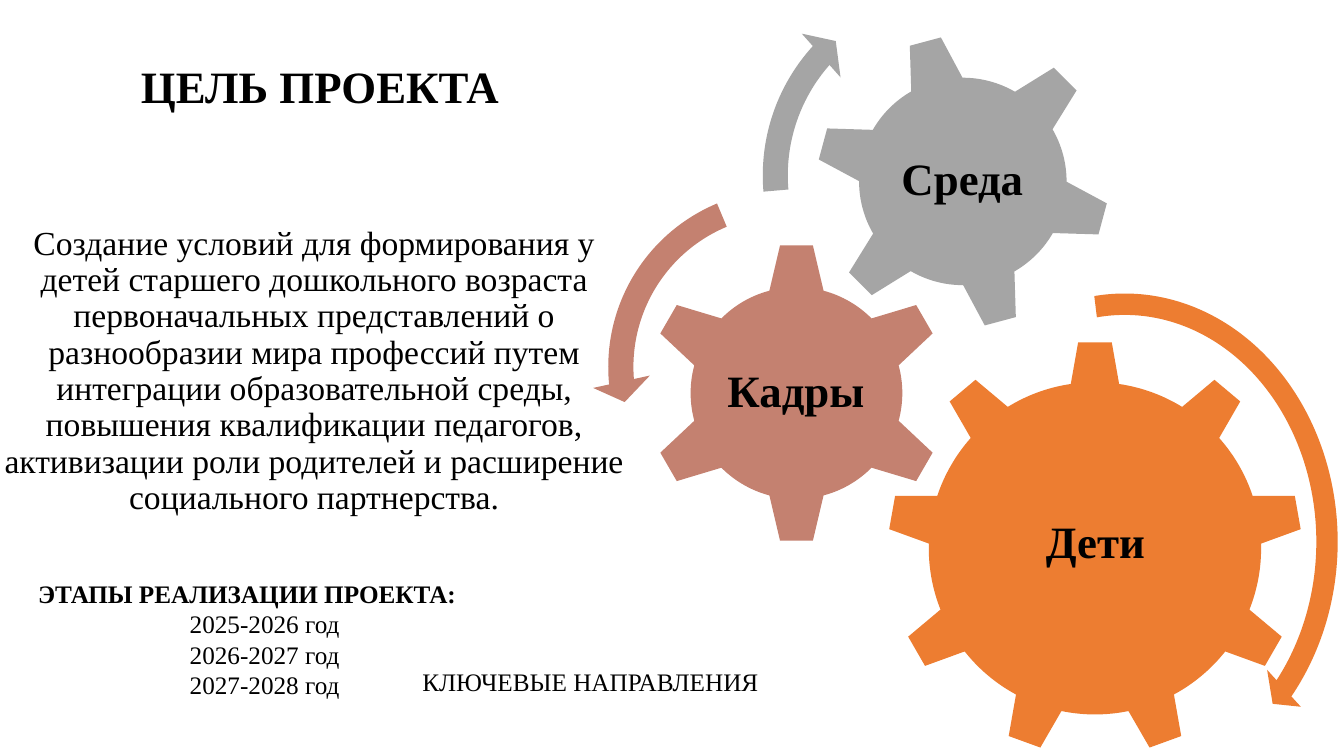
"""Build the project goal slide with three interlocking gears."""
from dataclasses import dataclass

from pptx import Presentation
from pptx.dml.color import RGBColor
from pptx.enum.shapes import MSO_SHAPE
from pptx.enum.text import MSO_ANCHOR, MSO_AUTO_SIZE, PP_ALIGN
from pptx.util import Inches, Pt

GEAR_6, GEAR_9 = MSO_SHAPE.GEAR_6, MSO_SHAPE.GEAR_9
ARROW, LEFT_ARROW = MSO_SHAPE.CIRCULAR_ARROW, MSO_SHAPE.LEFT_CIRCULAR_ARROW
LEFT, CENTER = PP_ALIGN.LEFT, PP_ALIGN.CENTER
TOP, MIDDLE = MSO_ANCHOR.TOP, MSO_ANCHOR.MIDDLE
NO_FIT = MSO_AUTO_SIZE.NONE
FONT = "Times New Roman"
BLACK = "000000"
ORANGE, ROSE, GRAY = "ED7D31", "C48170", "A5A5A5"

Area = tuple[float, float, float, float]

GOAL = (
    "Создание условий для формирования у детей старшего дошкольного возраста "
    "первоначальных представлений о разнообразии мира профессий путем интеграции "
    "образовательной среды, повышения квалификации педагогов, активизации роли "
    "родителей и расширение социального партнерства."
)
YEARS = ("2025-2026 год", "2026-2027 год", "2027-2028 год")


@dataclass(frozen=True)
class Figure:
    """A filled preset shape with its place, turn and adjustments."""

    kind: MSO_SHAPE
    area: Area
    color: str
    rotation: float = 0
    adjustments: tuple[float, ...] = ()


@dataclass(frozen=True)
class Label:
    """A gear caption and its place."""

    text: str
    area: Area


FIGURES = (
    Figure(GEAR_9, (8.8, 3.38, 4.12, 4.12), ORANGE),
    Figure(GEAR_6, (6.4, 2.4, 3, 3), ROSE),
    Figure(GEAR_6, (8.08, 0.33, 2.94, 2.94), GRAY, rotation=345),
    Figure(ARROW, (8.9, 2.77, 4.51, 5.21), ORANGE,
           adjustments=(0.047, 2.99, 25.57, 157.77, 0.055)),
    Figure(LEFT_ARROW, (5.87, 1.72, 3.84, 3.84), ROSE,
           adjustments=(0.065, 4.3, 104.89, 148.38, 0.075)),
    Figure(ARROW, (7.4, -0.33, 4.14, 4.14), GRAY,
           adjustments=(0.06, 3.94, 133.14, 105.08, 0.07)),
)
LABELS = (
    Label("Дети", (9.63, 4.34, 2.47, 2.12)),
    Label("Кадры", (7.15, 3.16, 1.49, 1.48)),
    Label("Среда", (8.72, 0.97, 1.65, 1.65)),
)


def paint(color_format, color: str) -> None:
    """Apply a hex colour to a font or fill colour."""
    color_format.rgb = RGBColor.from_string(color)


def write(para, text: str, *, size: float, bold: bool = False,
          align=LEFT, spacing: float = 1.0) -> None:
    """Write one formatted run into a paragraph."""
    para.alignment = align
    para.line_spacing = spacing
    span = para.add_run()
    span.text = text
    span.font.name = FONT
    span.font.size = Pt(size)
    span.font.bold = bold
    paint(span.font.color, BLACK)


def add_box(page, area: Area, *, wrap: bool = True, anchor=TOP,
            inset: float | None = None):
    """Add a text box and return its text frame."""
    frame = page.shapes.add_textbox(*map(Inches, area)).text_frame
    frame.word_wrap = wrap
    frame.vertical_anchor = anchor
    if inset is not None:
        frame.margin_left = frame.margin_right = Inches(inset)
        frame.margin_top = frame.margin_bottom = Inches(inset)
    return frame


def add_figure(page, figure: Figure) -> None:
    """Draw a gear or a curved arrow."""
    shape = page.shapes.add_shape(figure.kind, *map(Inches, figure.area))
    shape.shadow.inherit = False
    shape.fill.solid()
    paint(shape.fill.fore_color, figure.color)
    shape.line.fill.background()
    shape.rotation = figure.rotation
    for index, value in enumerate(figure.adjustments):
        shape.adjustments[index] = value


def add_label(page, label: Label) -> None:
    """Write a caption over its gear."""
    frame = add_box(page, label.area, anchor=MIDDLE, inset=0.04)
    write(frame.paragraphs[0], label.text, size=32, bold=True, align=CENTER, spacing=0.9)


def add_goal(page) -> None:
    """Place the goal statement in the title placeholder."""
    title = page.shapes.title
    title.left, title.top, title.width, title.height = map(Inches, (-0.15, 3.14, 6.53, 1.45))
    frame = title.text_frame
    frame.word_wrap = True
    frame.auto_size = NO_FIT
    frame.vertical_anchor = MIDDLE
    frame.margin_bottom = Inches(0.41)
    write(frame.paragraphs[0], GOAL, size=24, align=CENTER, spacing=0.9)


def add_stages(page) -> None:
    """Write the stage heading and its years."""
    frame = add_box(page, (0.28, 5.69, 4.69, 1.31))
    write(frame.paragraphs[0], "ЭТАПЫ РЕАЛИЗАЦИИ ПРОЕКТА:", size=18, bold=True)
    for year in YEARS:
        write(frame.add_paragraph(), year, size=18, align=CENTER)


def main() -> None:
    """Build and save the deck."""
    deck = Presentation()
    deck.slide_width, deck.slide_height = Inches(13.33), Inches(7.5)
    page = deck.slides.add_slide(deck.slide_layouts[5])
    add_goal(page)
    for figure in FIGURES:
        add_figure(page, figure)
    for label in LABELS:
        add_label(page, label)
    directions = add_box(page, (4.09, 6.56, 3.57, 0.4), wrap=False)
    write(directions.paragraphs[0], "КЛЮЧЕВЫЕ НАПРАВЛЕНИЯ", size=18)
    heading = add_box(page, (1.3, 0.53, 3.78, 0.64), wrap=False)
    write(heading.paragraphs[0], "ЦЕЛЬ ПРОЕКТА", size=32, bold=True)
    add_stages(page)
    deck.save("out.pptx")


if __name__ == "__main__":
    main()
